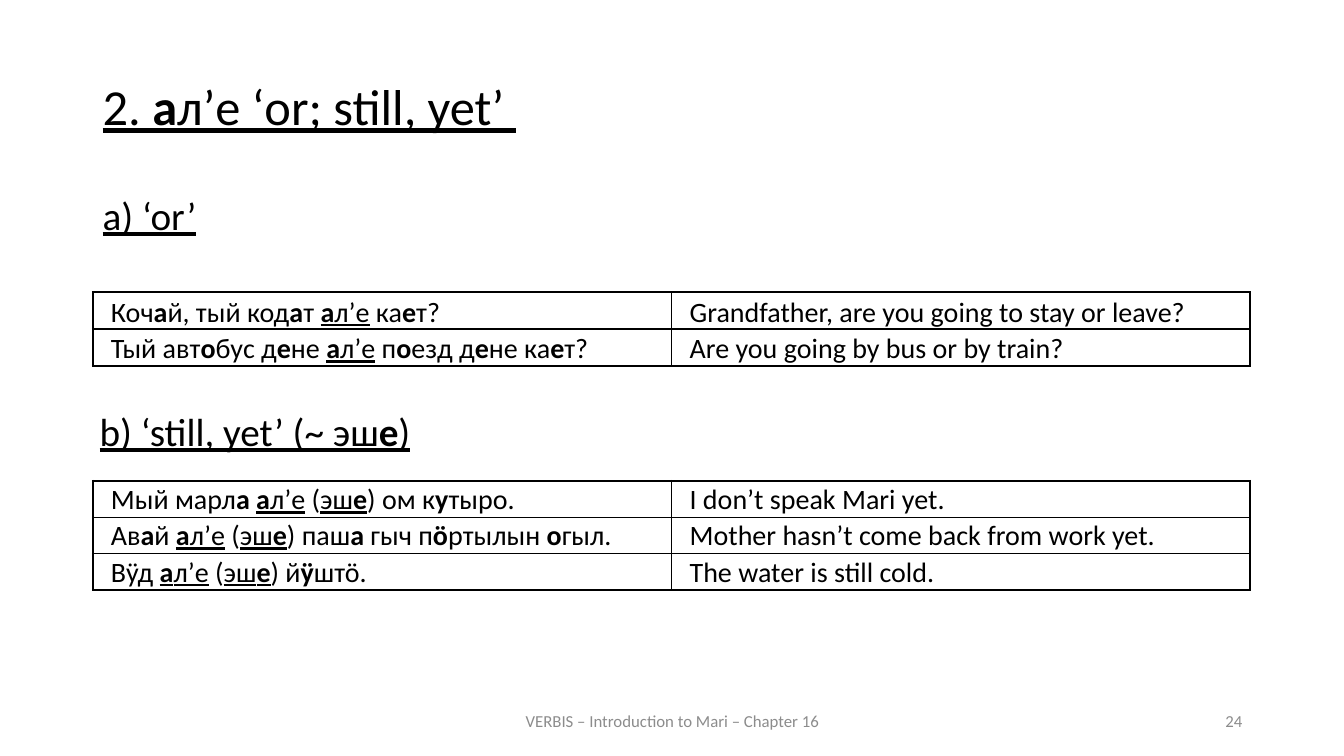
from dataclasses import dataclass

from lxml import etree
from pptx import Presentation
from pptx.dml.color import RGBColor
from pptx.enum.text import MSO_ANCHOR, PP_ALIGN
from pptx.oxml.ns import qn
from pptx.util import Pt

PX = 9144  # EMU, 100 px to the inch
FONT = "Calibri"
BLACK = RGBColor(0x00, 0x00, 0x00)
GREY = RGBColor(0x8C, 0x8C, 0x8C)
LEFT, CENTER, RIGHT = PP_ALIGN.LEFT, PP_ALIGN.CENTER, PP_ALIGN.RIGHT
JUSTIFY = PP_ALIGN.JUSTIFY
TOP, MIDDLE = MSO_ANCHOR.TOP, MSO_ANCHOR.MIDDLE
COL_W, ROW_H = 574, 36
INNER, OUTER = Pt(1), Pt(1.5)


@dataclass
class Label:
    """Text in which * switches bold and _ switches underline."""
    text: str
    left: int
    top: int
    width: int
    height: int
    size: int
    color: RGBColor = BLACK
    align: PP_ALIGN = LEFT
    anchor: MSO_ANCHOR = TOP
    before: int = 0
    lines: float = 1.0


@dataclass
class Grid:
    rows: list[tuple[str, str]]
    left: int
    top: int
    inset: int
    align: PP_ALIGN
    anchor: MSO_ANCHOR


LABELS = [
    Label("_2. *а*л’е ‘or; still, yet’ _", 92, 76, 1150, 99, 36,
          align=JUSTIFY, before=12, lines=0.9),
    Label("_a) ‘or’_", 92, 190, 1150, 58, 28, before=10, lines=0.9),
    Label("_b) ‘still, yet’ (~ эш*е*)_", 89, 404, 1150, 58, 28,
          before=10, lines=0.9),
    Label("VERBIS – Introduction to Mari – Chapter 16", 442, 695, 450, 40, 12,
          GREY, CENTER, MIDDLE),
    Label("24", 942, 695, 300, 40, 12, GREY, RIGHT, MIDDLE),
]

GRIDS = [
    Grid([
        ("Коч*а*й, тый код*а*т _*а*л’е_ ка*е*т?",
         "Grandfather, are you going to stay or leave?"),
        ("Тый авт*о*бус д*е*не _*а*л’е_ п*о*езд д*е*не ка*е*т?",
         "Are you going by bus or by train?"),
    ], 92, 290, 3, LEFT, MIDDLE),
    Grid([
        ("Мый марл*а _а*л’е_ (_эш*е*_) ом к*у*тыро.",
         "I don’t speak Mari yet."),
        ("Ав*а*й _*а*л’е_ (_эш*е*_) паш*а* гыч п*ӧ*ртылын *о*гыл.",
         "Mother hasn’t come back from work yet."),
        ("Вӱд _*а*л’е_ (_эш*е*_) й*ӱ*штӧ.",
         "The water is still cold."),
    ], 92, 477, 2, JUSTIFY, TOP),
]


def write(para, text: str, size: int, color: RGBColor) -> None:
    """Fill a paragraph with runs, following the marks in the text."""
    bold = False
    line = False
    for i, part in enumerate(text.split("_")):
        line = i % 2 == 1
        for j, piece in enumerate(part.split("*")):
            if j:
                bold = not bold
            if not piece:
                continue
            run = para.add_run()
            run.text = piece
            font = run.font
            font.name, font.size = FONT, Pt(size)
            font.bold, font.underline = bold, line
            font.color.rgb = color


def add_label(slide, item: Label) -> None:
    box = slide.shapes.add_textbox(item.left * PX, item.top * PX,
                                   item.width * PX, item.height * PX)
    frame = box.text_frame
    frame.word_wrap = True
    frame.vertical_anchor = item.anchor
    para = frame.paragraphs[0]
    para.alignment = item.align
    para.line_spacing = item.lines
    para.space_before = Pt(item.before)
    write(para, item.text, item.size, item.color)


def set_edges(cell, widths: dict[str, int]) -> None:
    """Draw the cell borders; they must precede the fill."""
    props = cell._tc.get_or_add_tcPr()
    for i, (side, width) in enumerate(widths.items()):
        edge = etree.Element(qn(f"a:ln{side}"), w=str(width))
        fill = etree.SubElement(edge, qn("a:solidFill"))
        etree.SubElement(fill, qn("a:srgbClr"), val=str(BLACK))
        props.insert(i, edge)


def add_grid(slide, grid: Grid) -> None:
    count = len(grid.rows)
    table = slide.shapes.add_table(count, 2, grid.left * PX, grid.top * PX,
                                   2 * COL_W * PX, count * ROW_H * PX).table
    table.first_row = table.horz_banding = False
    for r, row in enumerate(grid.rows):
        for c, text in enumerate(row):
            cell = table.cell(r, c)
            cell.fill.background()
            cell.margin_left = cell.margin_right = 18 * PX
            cell.margin_top, cell.margin_bottom = grid.inset * PX, 0
            cell.vertical_anchor = grid.anchor
            para = cell.text_frame.paragraphs[0]
            para.alignment = grid.align
            write(para, text, 20, BLACK)
            set_edges(cell, {
                "L": OUTER if c == 0 else INNER,
                "R": OUTER if c == 1 else INNER,
                "T": OUTER if r == 0 else INNER,
                "B": OUTER if r == count - 1 else INNER,
            })


def main() -> None:
    deck = Presentation()
    deck.slide_width, deck.slide_height = 1333 * PX, 750 * PX
    slide = deck.slides.add_slide(deck.slide_layouts[6])

    # Headings and footer
    for item in LABELS:
        add_label(slide, item)

    # Example sentences with translations
    for grid in GRIDS:
        add_grid(slide, grid)

    deck.save("out.pptx")


if __name__ == "__main__":
    main()
